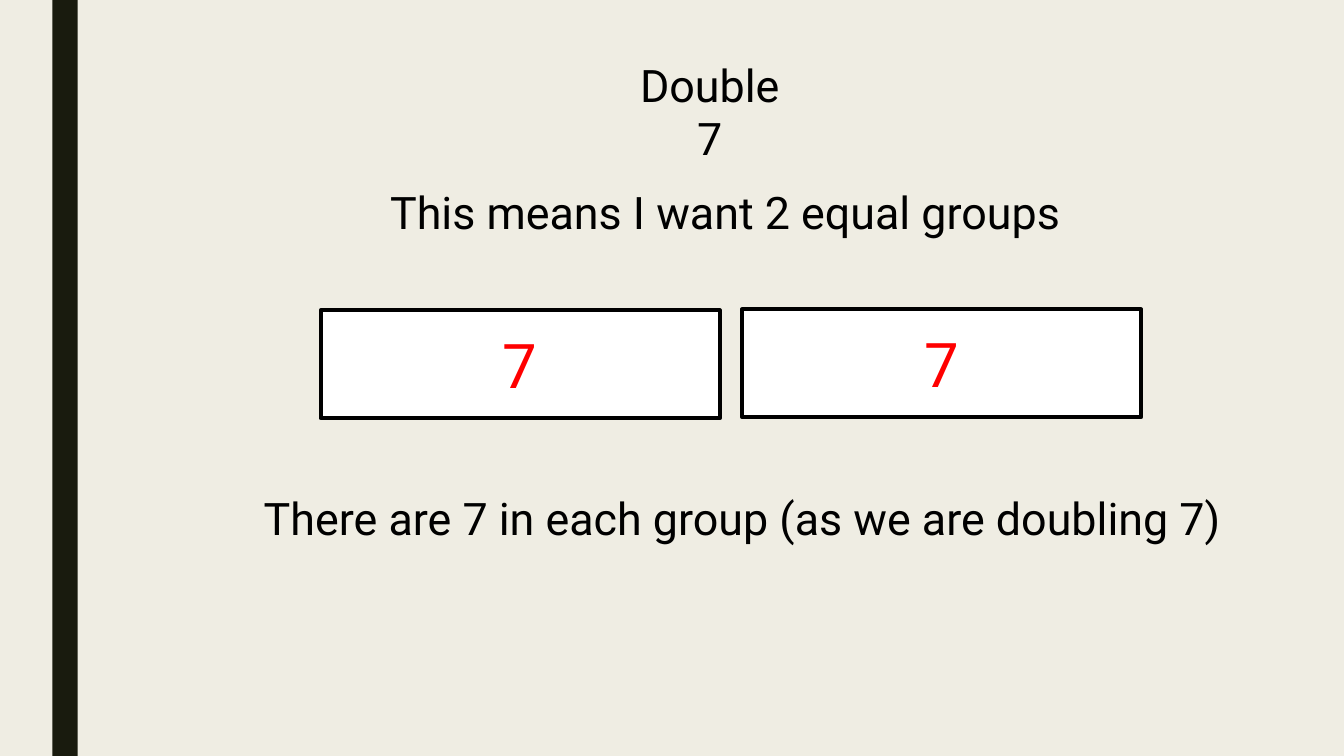
import pptx
import pptx.util
import pptx.dml.color
import pptx.enum.shapes
import pptx.enum.text

Inches = pptx.util.Inches
Pt = pptx.util.Pt
RGBColor = pptx.dml.color.RGBColor

# Content: text, left, top, width, side inset
SENTENCES = [
    ("Double 7", 6.08, 0.52, 1.92, 0.2),
    ("This means I want 2 equal groups", 1.42, 1.78, 11.55, 0.1),
    ("There are 7 in each group (as we are doubling 7)", 1.59, 4.82, 11.55, 0.1),
]
# Equal groups: number, left, top
GROUPS = [("7", 3.18, 3.08), ("7", 7.36, 3.07)]

# Sizes and colours
GROUP_WIDTH, GROUP_HEIGHT = 3.96, 1.07
NUMBER_WIDTH, NUMBER_HEIGHT = 2.05, 0.84
FONT = "Roboto"
CREAM = RGBColor(0xEF, 0xED, 0xE3)
DARK_OLIVE = RGBColor(0x19, 0x1B, 0x0E)
BLACK = RGBColor(0, 0, 0)
WHITE = RGBColor(0xFF, 0xFF, 0xFF)
RED = RGBColor(0xFF, 0, 0)


def add_text(page, text, left, top, width, height, size=32, color=BLACK, inset=0.1):
    box = page.shapes.add_textbox(Inches(left), Inches(top), Inches(width), Inches(height))
    frame = box.text_frame
    frame.word_wrap = True
    frame.margin_left = frame.margin_right = Inches(inset)
    para = frame.paragraphs[0]
    para.alignment = pptx.enum.text.PP_ALIGN.CENTER
    span = para.add_run()
    span.text = text
    span.font.name = FONT
    span.font.size = Pt(size)
    span.font.color.rgb = color


def add_rectangle(page, left, top, width, height, fill, line=None):
    shape = page.shapes.add_shape(
        pptx.enum.shapes.MSO_SHAPE.RECTANGLE,
        Inches(left), Inches(top), Inches(width), Inches(height))
    shape.shadow.inherit = False
    shape.fill.solid()
    shape.fill.fore_color.rgb = fill
    if line is None:
        shape.line.fill.background()
    else:
        shape.line.color.rgb = line
        shape.line.width = Pt(2.75)


def main():
    deck = pptx.Presentation()
    deck.slide_width, deck.slide_height = Inches(13.33), Inches(7.5)
    page = deck.slides.add_slide(deck.slide_layouts[6])
    page.background.fill.solid()
    page.background.fill.fore_color.rgb = CREAM

    # Side bar
    add_rectangle(page, 0.52, 0, 0.25, 7.5, DARK_OLIVE)

    # Sentences
    for text, left, top, width, inset in SENTENCES:
        add_text(page, text, left, top, width, 0.64, inset=inset)

    # Equal groups, each with its number in the middle
    for number, left, top in GROUPS:
        add_rectangle(page, left, top, GROUP_WIDTH, GROUP_HEIGHT, WHITE, BLACK)
        add_text(page, number,
                 left + (GROUP_WIDTH - NUMBER_WIDTH) / 2,
                 top + (GROUP_HEIGHT - NUMBER_HEIGHT) / 2,
                 NUMBER_WIDTH, NUMBER_HEIGHT, size=44, color=RED)

    deck.save("out.pptx")


if __name__ == "__main__":
    main()
